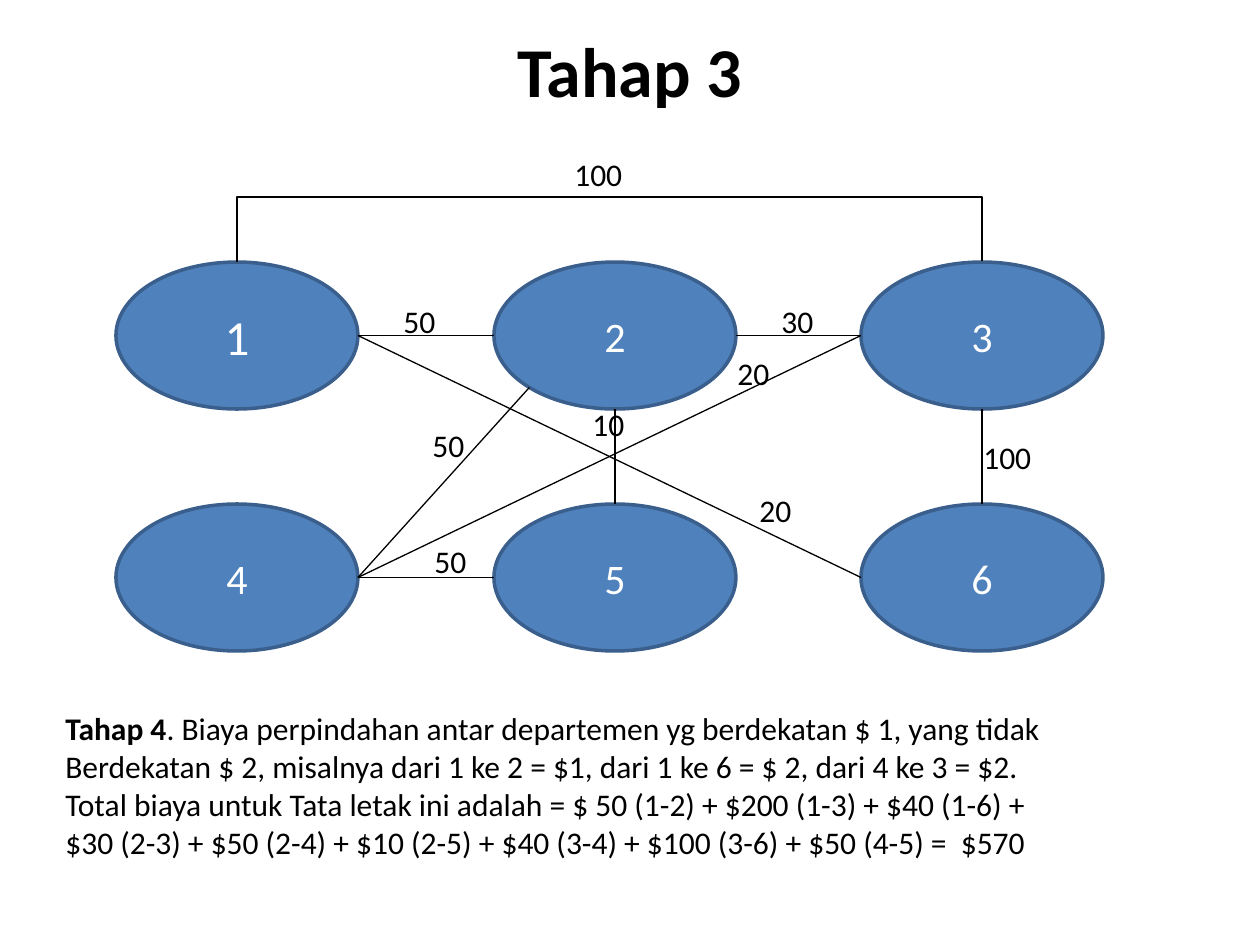
"""Build the department layout slide with its movement flows and total cost."""
from dataclasses import dataclass
from math import sqrt

from lxml import etree
from pptx import Presentation
from pptx import util as u
from pptx.dml.color import RGBColor
from pptx.enum import shapes, text
from pptx.oxml.ns import qn

SCALE = u.Inches(1) / 126


@dataclass(frozen=True)
class Theme:
    font: str = "Calibri"
    ink: str = "000000"
    node_ink: str = "FFFFFF"
    node_fill: str = "4F81BD"
    node_line: str = "3A5F8C"
    title_size: int = 40
    first_node_size: int = 28
    node_size: int = 24
    body_size: int = 18
    node_width: float = 2
    flow_width: float = 0.75


THEME = Theme()
COLUMNS = (116, 494, 861)
ROWS = (262, 504)
NODE_WIDTH, NODE_HEIGHT = 242, 147
BRACKET_RISE = 66
DIAGONAL = sqrt(0.5)
SIDES = {
    "top": (0, -1), "bottom": (0, 1), "left": (-1, 0), "right": (1, 0),
    "bottom left": (-DIAGONAL, DIAGONAL),
}
FLOWS = [
    (1, "right", 2, "left", "50", (391, 296)),
    (2, "right", 3, "left", "30", (769, 296)),
    (1, "right", 6, "left", "20", (747, 485)),
    (4, "right", 3, "left", "20", (725, 348)),
    (3, "bottom", 6, "top", "100", (971, 432)),
    (2, "bottom", 5, "top", "10", (580, 399)),
    (4, "right", 5, "left", "50", (422, 536)),
    (4, "right", 2, "bottom left", "50", (420, 420)),
]
COST_LINES = [
    [("Tahap 4", True),
     (". Biaya perpindahan antar departemen yg berdekatan $ 1, yang tidak", False)],
    [("Berdekatan $ 2, misalnya dari 1 ke 2 = $1, dari 1 ke 6 = $ 2, dari 4 ke 3 = $2.", False)],
    [("Total biaya untuk Tata letak ini adalah = $ 50 (1-2) + $200 (1-3) + $40 (1-6) +", False)],
    [("$30 (2-3) + $50 (2-4) + $10 (2-5) + $40 (3-4) + $100 (3-6) + $50 (4-5) =  $570", False)],
]


def px(length):
    """Turn pixels into EMU."""
    return u.Emu(round(length * SCALE))


def apply(target, values):
    """Set every attribute named in a dict of format values."""
    for name, value in values.items():
        setattr(target, name, value)


def write(frame, lines, size, color=THEME.ink, align=text.PP_ALIGN.LEFT):
    """Fill a text frame with lines of (words, bold) runs."""
    for index, line in enumerate(lines):
        paragraph = frame.add_paragraph() if index else frame.paragraphs[0]
        paragraph.alignment = align
        for words, bold in line:
            run = paragraph.add_run()
            run.text = words
            apply(run.font, {"name": THEME.font, "size": u.Pt(size), "bold": bold})
            run.font.color.rgb = RGBColor.from_string(color)


def add_title(slide, words):
    """Place and format the title placeholder."""
    title = slide.shapes.title
    apply(title, {"left": px(63), "top": px(21), "width": px(1134), "height": px(98)})
    title.text_frame.vertical_anchor = text.MSO_ANCHOR.MIDDLE
    write(title.text_frame, [[(words, True)]], THEME.title_size, align=text.PP_ALIGN.CENTER)


def add_text(slide, box, lines):
    """Add an unwrapped text box that fits its words."""
    frame = slide.shapes.add_textbox(*map(px, box)).text_frame
    apply(frame, {"word_wrap": False, "auto_size": text.MSO_AUTO_SIZE.SHAPE_TO_FIT_TEXT})
    write(frame, lines, THEME.body_size)


def add_label(slide, words, left, top):
    """Add the number that belongs to a flow."""
    width = 78 if len(words) > 2 else 60
    add_text(slide, (left, top, width, 50), [[(words, False)]])


def node_corner(number):
    """Return the left and top of a numbered department."""
    row, column = divmod(number - 1, len(COLUMNS))
    return COLUMNS[column], ROWS[row]


def node_point(number, side):
    """Return the point on a department's outline at the named side."""
    left, top = node_corner(number)
    across, down = SIDES[side]
    return left + NODE_WIDTH * (1 + across) / 2, top + NODE_HEIGHT * (1 + down) / 2


def add_node(slide, number):
    """Add one department ellipse."""
    box = (*node_corner(number), NODE_WIDTH, NODE_HEIGHT)
    node = slide.shapes.add_shape(shapes.MSO_SHAPE.OVAL, *map(px, box))
    node.shadow.inherit = False
    node.fill.solid()
    node.fill.fore_color.rgb = RGBColor.from_string(THEME.node_fill)
    node.line.color.rgb = RGBColor.from_string(THEME.node_line)
    node.line.width = u.Pt(THEME.node_width)
    node.text_frame.vertical_anchor = text.MSO_ANCHOR.MIDDLE
    size = THEME.first_node_size if number == 1 else THEME.node_size
    write(node.text_frame, [[(str(number), False)]], size, THEME.node_ink,
          text.PP_ALIGN.CENTER)


def add_line(slide, kind, start, end):
    """Add a thin connector without a shadow."""
    line = slide.shapes.add_connector(kind, *map(px, (*start, *end)))
    line.line.color.rgb = RGBColor.from_string(THEME.ink)
    line.line.width = u.Pt(THEME.flow_width)
    etree.SubElement(line._element.spPr, qn("a:effectLst"))
    return line


def add_bracket(slide, first, last):
    """Join the tops of two departments with an elbow that rises above them."""
    left, top = node_point(first, "top")
    right = node_point(last, "top")[0]
    middle, span = (left + right) / 2, right - left
    bracket = add_line(slide, shapes.MSO_CONNECTOR.ELBOW,
                       (middle + 0.5, top + span / 2), (middle - 0.5, top - span / 2))
    properties = bracket._element.spPr
    properties.find(qn("a:xfrm")).set("rot", str(90 * 60000))
    geometry = properties.find(qn("a:prstGeom"))
    guides = geometry.find(qn("a:avLst"))
    if guides is None:
        guides = etree.SubElement(geometry, qn("a:avLst"))
    etree.SubElement(guides, qn("a:gd"), name="adj1", fmla=f"val {BRACKET_RISE * 100000}")


def main():
    """Build and save the slide."""
    presentation = Presentation()
    apply(presentation, {"slide_width": u.Inches(10), "slide_height": u.Inches(7.5)})
    slide = presentation.slides.add_slide(presentation.slide_layouts[5])
    add_title(slide, "Tahap 3")
    for number in range(1, len(COLUMNS) * len(ROWS) + 1):
        add_node(slide, number)
    add_bracket(slide, 1, 3)
    add_label(slide, "100", 562, 149)
    for source, source_side, target, target_side, amount, place in FLOWS:
        add_line(slide, shapes.MSO_CONNECTOR.STRAIGHT,
                 node_point(source, source_side), node_point(target, target_side))
        add_label(slide, amount, *place)
    add_text(slide, (53, 703, 1116, 165), COST_LINES)
    presentation.save("out.pptx")


if __name__ == "__main__":
    main()
